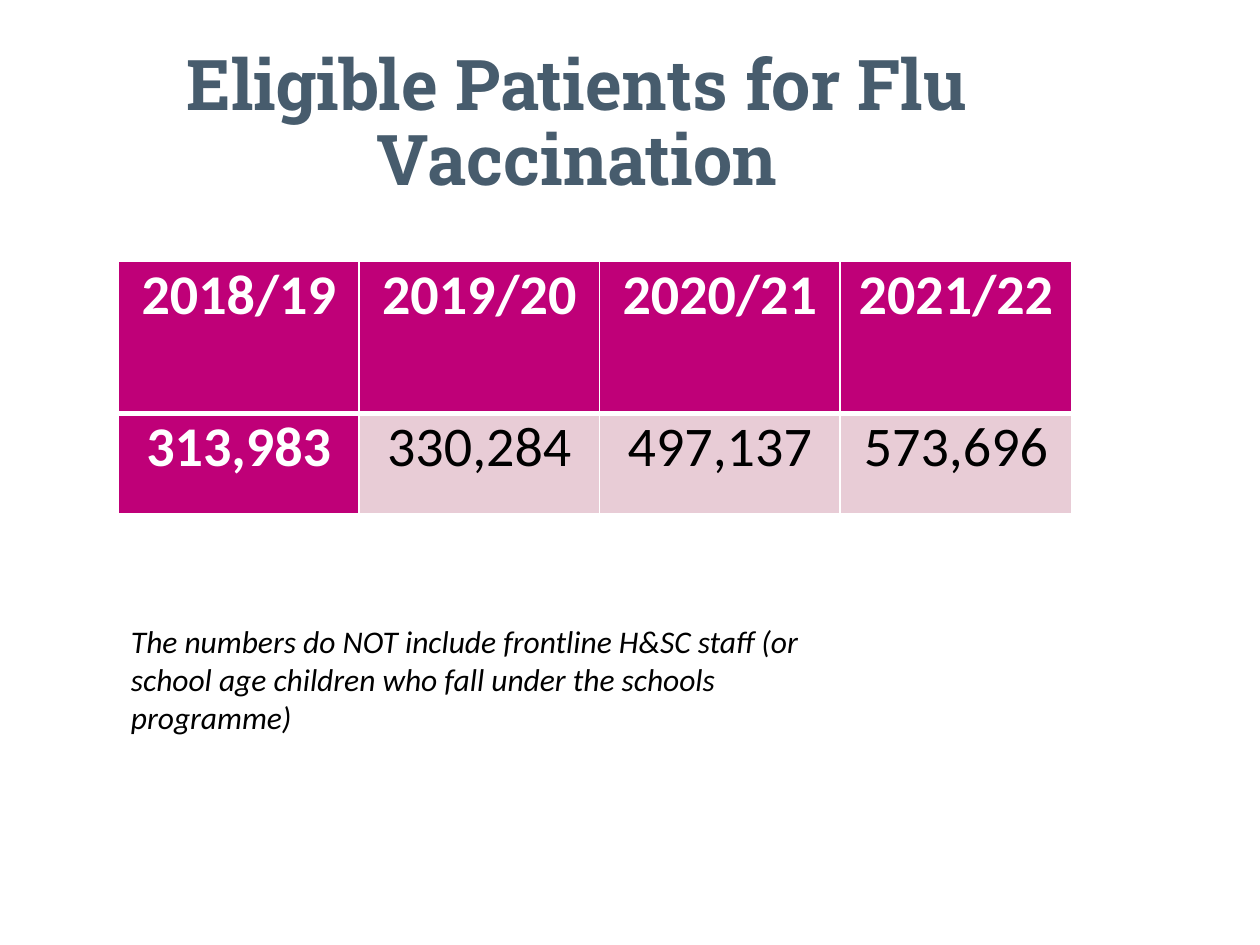
from lxml.etree import SubElement
from pptx import Presentation
from pptx.dml.color import RGBColor
from pptx.enum.text import MSO_ANCHOR, MSO_AUTO_SIZE, PP_ALIGN
from pptx.oxml.ns import qn
from pptx.util import Cm, Pt

TITLE = "Eligible Patients for Flu Vaccination"
YEARS = ["2018/19", "2019/20", "2020/21", "2021/22"]
PATIENTS = ["313,983", "330,284", "497,137", "573,696"]
NOTE = ("The numbers do NOT include frontline H&SC staff (or school age children "
        "who fall under the schools programme)")

SLATE, MAGENTA, PINK, WHITE, BLACK = "475C6D", "BF0078", "E8CCD6", "FFFFFF", "000000"
LEFT = Cm(2.39)
COLUMN_WIDTHS = [4.85, 4.85, 4.85, 4.67]
ROW_HEIGHTS = [3.07, 2.03]


def color(value):
    return RGBColor.from_string(value)


def write(frame, text, font, size, ink, align=PP_ALIGN.LEFT, bold=False, italic=False):
    para = frame.paragraphs[0]
    para.alignment = align
    span = para.add_run()
    span.text = text
    span.font.name, span.font.size = font, Pt(size)
    span.font.bold, span.font.italic = bold, italic
    span.font.color.rgb = color(ink)
    return para


def add_border(cell, side, points):
    line = SubElement(cell._tc.get_or_add_tcPr(), qn(f"a:{side}"), w=str(Pt(points)))
    fill = SubElement(line, qn("a:solidFill"))
    SubElement(fill, qn("a:srgbClr"), val=WHITE)


def add_title(page):
    title = page.shapes.title
    title.left, title.top, title.width, title.height = LEFT, Cm(1.5), Cm(18.47), Cm(2.06)
    title.text_frame.word_wrap = True
    title.text_frame.auto_size = MSO_AUTO_SIZE.NONE
    title.text_frame.vertical_anchor = MSO_ANCHOR.MIDDLE
    para = write(title.text_frame, TITLE, "Roboto Slab", 40, SLATE, PP_ALIGN.CENTER, bold=True)
    para.line_spacing = 0.9


def add_patient_table(page):
    rows = [YEARS, PATIENTS]
    table = page.shapes.add_table(len(rows), len(YEARS), LEFT, Cm(5.26),
                                  Cm(sum(COLUMN_WIDTHS)), Cm(sum(ROW_HEIGHTS))).table
    table.first_col, table.horz_banding = True, False
    for column, width in zip(table.columns, COLUMN_WIDTHS):
        column.width = Cm(width)
    for r, texts in enumerate(rows):
        table.rows[r].height = Cm(ROW_HEIGHTS[r])
        for c, text in enumerate(texts):
            cell = table.cell(r, c)
            heading = r == 0 or c == 0
            cell.margin_left = cell.margin_right = Cm(0.18)
            cell.margin_top = cell.margin_bottom = 0
            borders = {"lnL": 1, "lnR": 1, "lnT": 1 if r == 0 else 3, "lnB": 3 if r == 0 else 1}
            for side, points in borders.items():
                add_border(cell, side, points)
            cell.fill.solid()
            cell.fill.fore_color.rgb = color(MAGENTA if heading else PINK)
            write(cell.text_frame, text, "Calibri", 32, WHITE if heading else BLACK,
                  PP_ALIGN.CENTER, bold=heading)


def add_note(page):
    box = page.shapes.add_textbox(LEFT, Cm(12.42), Cm(14.63), Cm(3.33))
    box.text_frame.word_wrap = True
    write(box.text_frame, NOTE, "Calibri", 18, BLACK, italic=True)


def main():
    """Build the flu vaccination eligibility slide."""
    deck = Presentation()
    deck.slide_width, deck.slide_height = Cm(25.4), Cm(19.05)
    page = deck.slides.add_slide(deck.slide_layouts[5])
    add_title(page)
    add_patient_table(page)
    add_note(page)
    deck.save("out.pptx")


if __name__ == "__main__":
    main()
